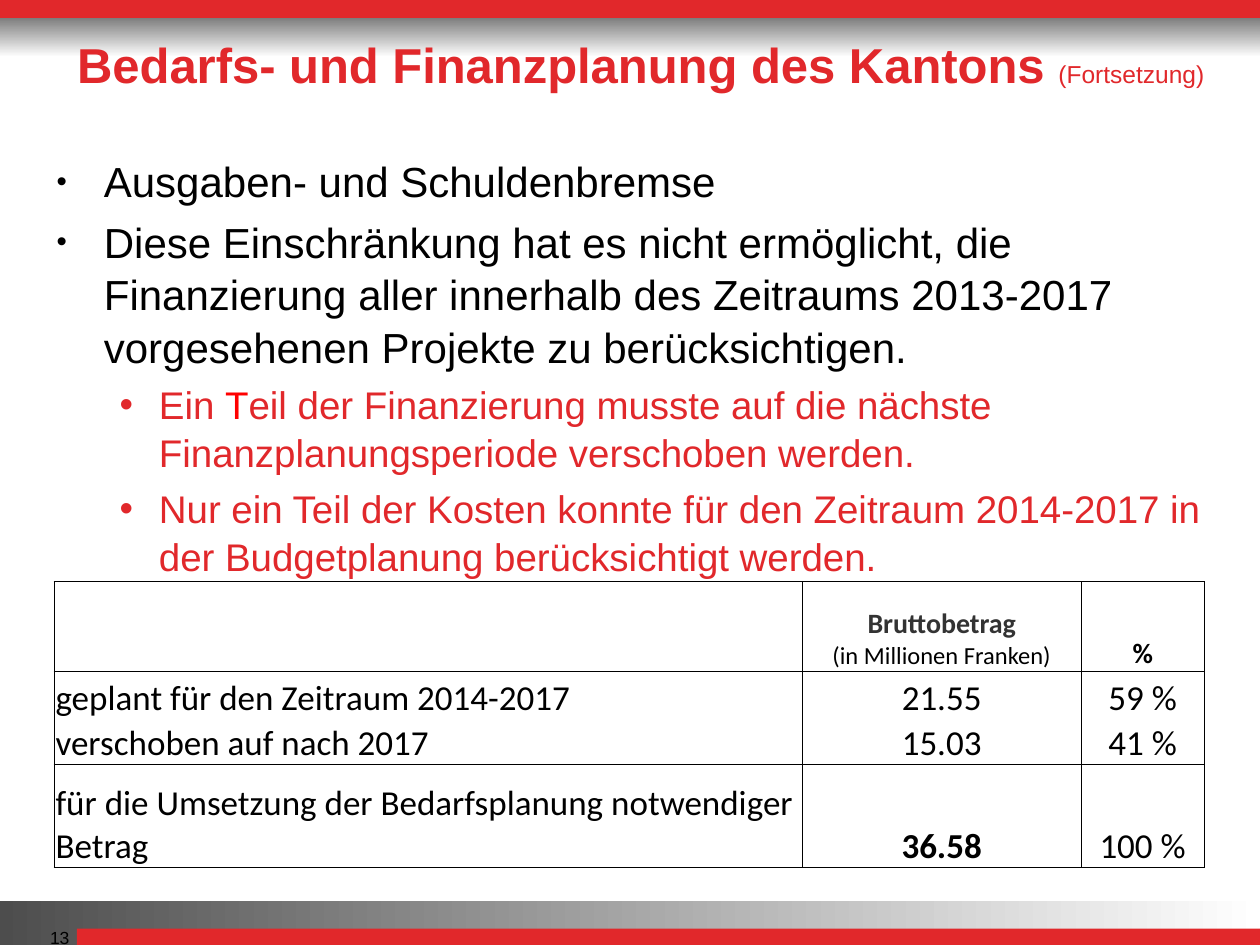
from lxml.etree import SubElement
from pptx import Presentation
from pptx.dml.color import RGBColor
from pptx.enum.shapes import MSO_SHAPE as Preset
from pptx.enum.text import MSO_ANCHOR as Anchor, MSO_AUTO_SIZE as AutoSize, PP_ALIGN as Align
from pptx.oxml.ns import qn
from pptx.util import Cm, Pt

COLORS = {
    "red": "E1282B",
    "bright_red": "FF0000",
    "black": "000000",
    "heading": "333333",
    "top_gray": "5F5F5F",
    "bottom_gray": "4D4D4D",
    "white": "FFFFFF",
}
SUBTITLE = {"size": 14, "bold": False}
COLUMN_WIDTHS = [15.09, 5.61, 2.49]
ROW_HEIGHTS = [1.8, 0.99, 0.89, 2.08]
ROWS = [
    ["geplant für den Zeitraum 2014-2017", "21.55", "59 %"],
    ["verschoben auf nach 2017", "15.03", "41 %"],
    ["für die Umsetzung der Bedarfsplanung notwendiger Betrag", "36.58", "100 %"],
]


def rgb(name):
    return RGBColor.from_string(COLORS[name])


def add_text(paragraph, text, size=20, color="black", bold=False, font="Arial", align=Align.LEFT):
    paragraph.alignment = align
    run = paragraph.add_run()
    run.text = text
    run.font.name = font
    run.font.size = Pt(size)
    run.font.bold = bold
    run.font.color.rgb = rgb(color)


def place(shape, left, top, width, height):
    shape.left, shape.top, shape.width, shape.height = map(Cm, (left, top, width, height))


def add_bar(slide, box, color, fade_angle=None):
    shape = slide.shapes.add_shape(Preset.RECTANGLE, *map(Cm, box))
    shape.shadow.inherit = False
    shape.line.fill.background()
    if fade_angle is None:
        shape.fill.solid()
        shape.fill.fore_color.rgb = rgb(color)
    else:
        shape.fill.gradient()
        shape.fill.gradient_angle = fade_angle
        for stop, name in zip(shape.fill.gradient_stops, (color, "white")):
            stop.color.rgb = rgb(name)
    slide.shapes.title.element.addprevious(shape.element)


def add_title(slide):
    title = slide.shapes.title
    place(title, 1.3, 0.48, 23.39, 2.64)
    frame = title.text_frame
    frame.auto_size = AutoSize.NONE
    frame.vertical_anchor = Anchor.TOP
    frame.margin_top = Cm(0.22)
    paragraph = frame.paragraphs[0]
    add_text(paragraph, "Bedarfs- und Finanzplanung des Kantons ", size=28, color="red", bold=True)
    add_text(paragraph, "(Fortsetzung)", color="red", **SUBTITLE)


def add_bullet(paragraph, level, indent, hanging, bullet_size):
    paragraph.level = level
    properties = paragraph._p.get_or_add_pPr()
    properties.set("marL", str(Cm(indent)))
    properties.set("indent", str(-Cm(hanging)))
    SubElement(properties, qn("a:buSzPct"), val=str(bullet_size * 1000))
    SubElement(properties, qn("a:buFont"), typeface="Arial")
    SubElement(properties, qn("a:buChar"), char="•")


def add_list(slide):
    body = slide.placeholders[1]
    place(body, 0.89, 2.97, 24.51, 8.74)
    frame = body.text_frame
    frame.auto_size = AutoSize.NONE
    items = [
        (0, [("Ausgaben- und Schuldenbremse", "black")]),
        (0, [("Diese Einschränkung hat es nicht ermöglicht, die Finanzierung aller innerhalb "
              "des Zeitraums 2013-2017 vorgesehenen Projekte zu berücksichtigen.", "black")]),
        (1, [("Ein ", "red"), ("T", "bright_red"),
             ("eil der Finanzierung musste auf die nächste Finanzplanungsperiode "
              "verschoben werden.", "red")]),
        (1, [("Nur ein Teil der Kosten konnte für den Zeitraum 2014-2017 in der "
              "Budgetplanung berücksichtigt werden.", "red")]),
    ]
    levels = [(24, 0.95, 0.95, 70), (22, 2.06, 0.79, 100)]
    for index, (level, parts) in enumerate(items):
        size, indent, hanging, bullet_size = levels[level]
        paragraph = frame.add_paragraph() if index else frame.paragraphs[0]
        add_bullet(paragraph, level, indent, hanging, bullet_size)
        paragraph.space_before = Pt(size * 0.2 if index else 0)
        paragraph.line_spacing = 1.04
        for text, color in parts:
            add_text(paragraph, text, size=size, color=color)


def format_cell(cell, hidden_side=None):
    cell.vertical_anchor = Anchor.BOTTOM
    cell.margin_left = cell.margin_right = cell.margin_top = Cm(0.03)
    cell.margin_bottom = 0
    properties = cell._tc.get_or_add_tcPr()
    for side in "LRTB":
        line = SubElement(properties, qn(f"a:ln{side}"), w=str(Pt(0.5)))
        if side == hidden_side:
            SubElement(line, qn("a:noFill"))
        else:
            fill = SubElement(line, qn("a:solidFill"))
            SubElement(fill, qn("a:srgbClr"), val=COLORS["black"])
    cell.fill.background()


def add_cost_table(slide):
    table = slide.shapes.add_table(
        len(ROW_HEIGHTS), len(COLUMN_WIDTHS), Cm(1.09), Cm(11.73),
        Cm(sum(COLUMN_WIDTHS)), Cm(sum(ROW_HEIGHTS))).table
    table.first_row = table.horz_banding = False
    for column, width in zip(table.columns, COLUMN_WIDTHS):
        column.width = Cm(width)
    hidden_sides = {1: "B", 2: "T"}
    for index, (row, height) in enumerate(zip(table.rows, ROW_HEIGHTS)):
        row.height = Cm(height)
        for cell in row.cells:
            format_cell(cell, hidden_sides.get(index))

    header = {"font": "Calibri", "align": Align.CENTER}
    amount = table.cell(0, 1).text_frame
    add_text(amount.paragraphs[0], "Bruttobetrag", size=16, color="heading", bold=True, **header)
    add_text(amount.add_paragraph(), "(in Millionen Franken)", **SUBTITLE, **header)
    add_text(table.cell(0, 2).text_frame.paragraphs[0], "%", size=16, bold=True, **header)
    for row_index, values in enumerate(ROWS, start=1):
        for column_index, text in enumerate(values):
            add_text(table.cell(row_index, column_index).text_frame.paragraphs[0], text,
                     font="Calibri", bold=text == "36.58",
                     align=Align.CENTER if column_index else Align.LEFT)


def add_page_number(slide):
    shape = slide.shapes.add_textbox(*map(Cm, (0.46, 18.57, 1.19, 0.69)))
    shape.text_frame.word_wrap = True
    add_text(shape.text_frame.paragraphs[0], "13", size=10, align=Align.RIGHT)


def main():
    presentation = Presentation()
    presentation.slide_width, presentation.slide_height = Cm(25.4), Cm(19.05)
    slide = presentation.slides.add_slide(presentation.slide_layouts[1])
    add_bar(slide, (0, 0.18, 25.43, 0.97), "top_gray", fade_angle=270)
    add_bar(slide, (0, 0, 25.43, 0.36), "red")
    add_bar(slide, (-0.03, 18.16, 25.43, 0.89), "bottom_gray", fade_angle=0)
    add_bar(slide, (1.55, 18.72, 23.85, 0.36), "red")
    add_title(slide)
    add_page_number(slide)
    add_cost_table(slide)
    add_list(slide)
    presentation.save("out.pptx")


if __name__ == "__main__":
    main()
